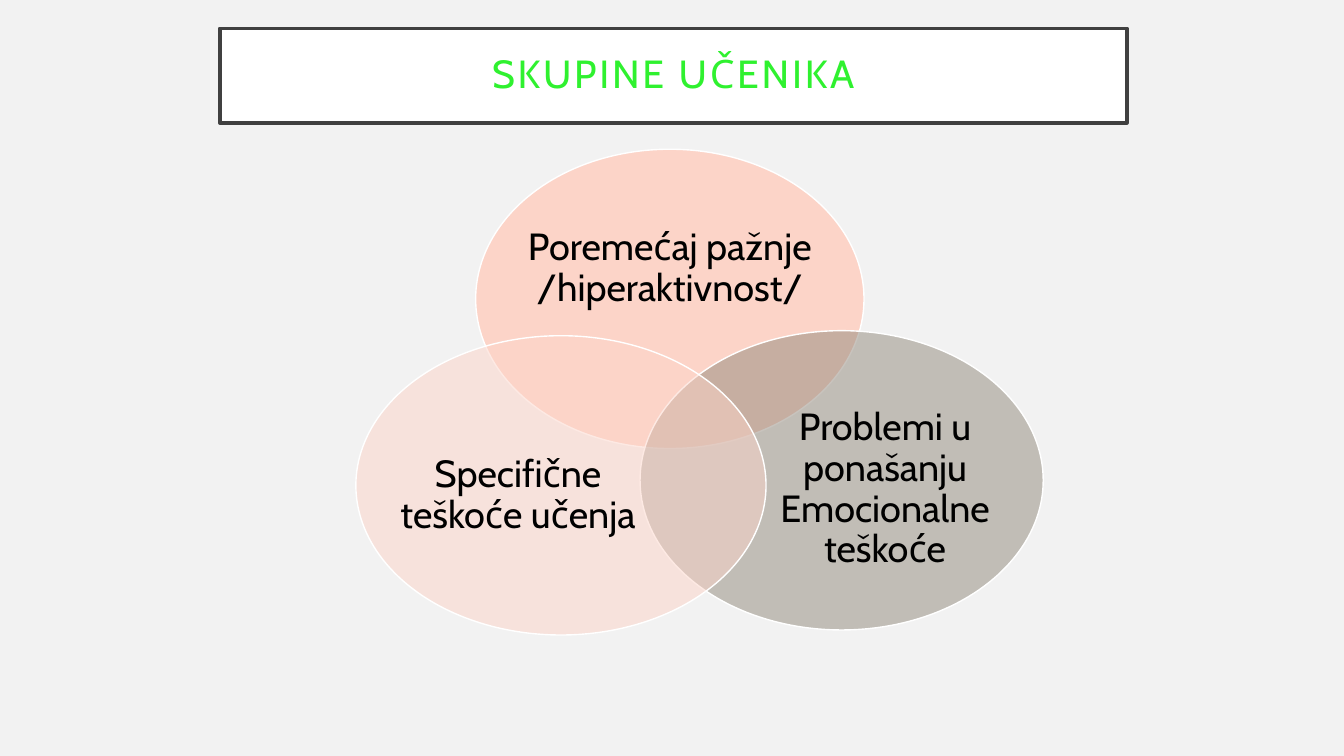
from lxml import etree
from pptx import Presentation
from pptx.dml.color import RGBColor
from pptx.enum.shapes import MSO_SHAPE
from pptx.enum.text import MSO_ANCHOR, PP_ALIGN
from pptx.oxml.ns import qn
from pptx.util import Pt

OVAL = MSO_SHAPE.OVAL
MIDDLE = MSO_ANCHOR.MIDDLE
CENTER = PP_ALIGN.CENTER

FONT = "Cabin"
COLORS = {
    "background": "F2F2F2",
    "white": "FFFFFF",
    "frame": "404040",
    "title": "2FF12F",
    "text": "000000",
    "peach": "FCD4C8",
    "taupe": "92897C",
}

TITLE = "SKUPINE UČENIKA"
TITLE_BOX = (157, 20.2, 648, 67.6)
OVAL_HEIGHT = 213.8

# Boxes are left, top, width, height; ovals share one height.
GROUPS = [
    {"text": "Poremećaj pažnje /hiperaktivnost/", "color": "peach", "opacity": 100,
     "oval": (339.8, 106.6, 277.4), "label": (376.4, 144, 204, 96.5)},
    {"text": "Problemi u ponašanju Emocionalne teškoće", "color": "taupe", "opacity": 50,
     "oval": (457.2, 236.2, 288), "label": (545.8, 290.9, 172.8, 117.4)},
    {"text": "Specifične teškoće učenja", "color": "peach", "opacity": 50,
     "oval": (254.2, 239.8, 293), "label": (282.2, 295.2, 175.7, 117.4)},
]


def rgb(name):
    return RGBColor.from_string(COLORS[name])


def points(box):
    return [Pt(v) for v in box]


def paint(sp, fill, line, width, opacity=100):
    sp.fill.solid()
    sp.fill.fore_color.rgb = rgb(fill)
    if opacity < 100:
        color = sp.fill._xPr.find(qn("a:solidFill"))[0]
        etree.SubElement(color, qn("a:alpha"), val=str(opacity * 1000))
    sp.line.color.rgb = rgb(line)
    sp.line.width = Pt(width)
    sp.shadow.inherit = False


def write(sp, text, size, color, inset):
    """Set one centred paragraph and return its run."""
    tf = sp.text_frame
    tf.word_wrap = True
    tf.vertical_anchor = MIDDLE
    tf.margin_left = tf.margin_top = tf.margin_right = tf.margin_bottom = Pt(inset)
    p = tf.paragraphs[0]
    p.alignment = CENTER
    p.line_spacing = 0.9
    p.space_before = Pt(0)
    r = p.add_run()
    r.text = text
    r.font.name = FONT
    r.font.size = Pt(size)
    r.font.color.rgb = rgb(color)
    return r


def main():
    prs = Presentation()
    prs.slide_width, prs.slide_height = Pt(960), Pt(540)
    s = prs.slides.add_slide(prs.slide_layouts[5])
    s.background.fill.solid()
    s.background.fill.fore_color.rgb = rgb("background")

    title = s.shapes.title
    title.left, title.top, title.width, title.height = points(TITLE_BOX)
    paint(title, "white", "frame", 2.5)
    r = write(title, TITLE, 28, "title", 14.4)
    r.font._element.set("spc", "200")

    venn = s.shapes.add_group_shape()
    for group in GROUPS:
        oval = venn.shapes.add_shape(OVAL, *points((*group["oval"], OVAL_HEIGHT)))
        paint(oval, group["color"], "white", 1, group["opacity"])
        label = venn.shapes.add_textbox(*points(group["label"]))
        write(label, group["text"], 27, "text", 0)

    prs.save("out.pptx")


if __name__ == "__main__":
    main()
